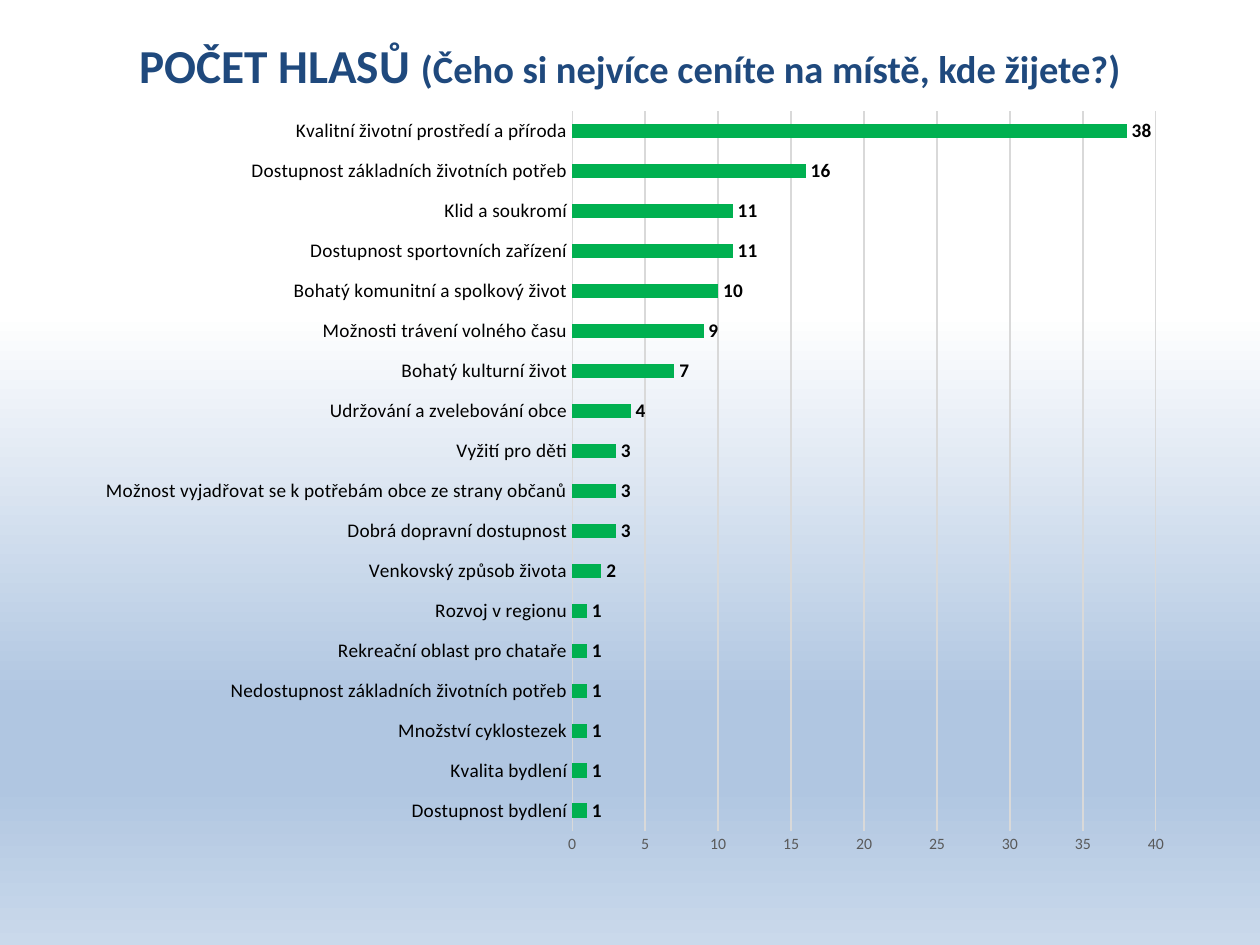
import lxml.etree
import pptx
import pptx.chart.data
import pptx.dml.color
import pptx.enum.chart
import pptx.enum.text
import pptx.oxml
import pptx.oxml.ns
import pptx.util

Inches = pptx.util.Inches
Pt = pptx.util.Pt
qn = pptx.oxml.ns.qn


def color(code):
    return pptx.dml.color.RGBColor.from_string(code)


def write(para, text, size=11, hue="000000", bold=False):
    run = para.add_run()
    run.text = text
    run.font.name = "Calibri"
    run.font.size = Pt(size)
    run.font.bold = bold
    run.font.color.rgb = color(hue)


deck = pptx.Presentation()
deck.slide_width, deck.slide_height = Inches(10), Inches(7.5)
slide = deck.slides.add_slide(deck.slide_layouts[6])

# Background: white fading down to blue
fill = slide.background.fill
fill.gradient()
fill.gradient_angle = 270
stops = slide.element.find(".//" + qn("a:gsLst"))
for stop in list(stops):
    stops.remove(stop)
for pos, hue in [(33, "FFFFFF"), (74, "B0C6E1"), (83, "B0C6E1"), (100, "CAD9EB")]:
    stop = lxml.etree.SubElement(stops, qn("a:gs"), pos=str(pos * 1000))
    lxml.etree.SubElement(stop, qn("a:srgbClr"), val=hue)

# Title
box = slide.shapes.add_textbox(Inches(0.5), Inches(0.13), Inches(9), Inches(0.77))
frame = box.text_frame
frame.word_wrap = True
frame.vertical_anchor = pptx.enum.text.MSO_ANCHOR.MIDDLE
para = frame.paragraphs[0]
para.alignment = pptx.enum.text.PP_ALIGN.CENTER
write(para, "POČET HLASŮ ", size=27, hue="1F497D", bold=True)
write(para, "(Čeho si nejvíce ceníte na místě, kde žijete?)",
      size=22, hue="1F497D", bold=True)

# Votes, from the bottom bar up
votes = [
    ("Dostupnost bydlení", 1),
    ("Kvalita bydlení", 1),
    ("Množství cyklostezek", 1),
    ("Nedostupnost základních životních potřeb", 1),
    ("Rekreační oblast pro chataře", 1),
    ("Rozvoj v regionu", 1),
    ("Venkovský způsob života", 2),
    ("Dobrá dopravní dostupnost", 3),
    ("Možnost vyjadřovat se k potřebám obce ze strany občanů", 3),
    ("Vyžití pro děti", 3),
    ("Udržování a zvelebování obce", 4),
    ("Bohatý kulturní život", 7),
    ("Možnosti trávení volného času", 9),
    ("Bohatý komunitní a spolkový život", 10),
    ("Dostupnost sportovních zařízení", 11),
    ("Klid a soukromí", 11),
    ("Dostupnost základních životních potřeb", 16),
    ("Kvalitní životní prostředí a příroda", 38),
]
data = pptx.chart.data.CategoryChartData()
data.categories = [name for name, count in votes]
data.add_series("Series 1", [count for name, count in votes])

# Bar chart
chart = slide.shapes.add_chart(
    pptx.enum.chart.XL_CHART_TYPE.BAR_CLUSTERED,
    Inches(0.67), Inches(0.76), Inches(8.74), Inches(6.14), data).chart
chart.has_legend = False
chart.has_title = False
chart.font.name = "Calibri"
chart.font.size = Pt(10)
chart.font.color.rgb = color("000000")

plot = chart.plots[0]
plot.gap_width = 182
plot.vary_by_categories = False
bars = plot.series[0]
bars.format.fill.solid()
bars.format.fill.fore_color.rgb = color("00B050")

tags = bars.data_labels
tags.show_value = True
tags.position = pptx.enum.chart.XL_LABEL_POSITION.OUTSIDE_END
tags.font.bold = True

# Axes and grid
names, scale = chart.category_axis, chart.value_axis
for part, size, hue in [(tags, 11, "000000"), (names.tick_labels, 11, "000000"),
                        (scale.tick_labels, 9, "595959")]:
    part.font.name = "Calibri"
    part.font.size = Pt(size)
    part.font.color.rgb = color(hue)
for axis in (names, scale):
    axis.major_tick_mark = pptx.enum.chart.XL_TICK_MARK.NONE
    axis.minor_tick_mark = pptx.enum.chart.XL_TICK_MARK.NONE
names.has_major_gridlines = False
scale.has_major_gridlines = True
scale.minimum_scale, scale.maximum_scale, scale.major_unit = 0, 40, 5
scale.format.line.fill.background()
for line in (names.format.line, scale.major_gridlines.format.line):
    line.color.rgb = color("D9D9D9")
    line.width = Pt(0.75)

# Fixed inner plot area, as shares of the chart
area = chart.element.find(".//" + qn("c:plotArea"))
for old in area.findall(qn("c:layout")):
    area.remove(old)
layout = lxml.etree.Element(qn("c:layout"))
area.insert(0, layout)
manual = lxml.etree.SubElement(layout, qn("c:manualLayout"))
for tag, val in [("layoutTarget", "inner"), ("xMode", "edge"), ("yMode", "edge"),
                 ("x", 0.443), ("y", 0.02), ("w", 0.53), ("h", 0.93)]:
    lxml.etree.SubElement(manual, qn("c:" + tag), val=str(val))

deck.save("out.pptx")
